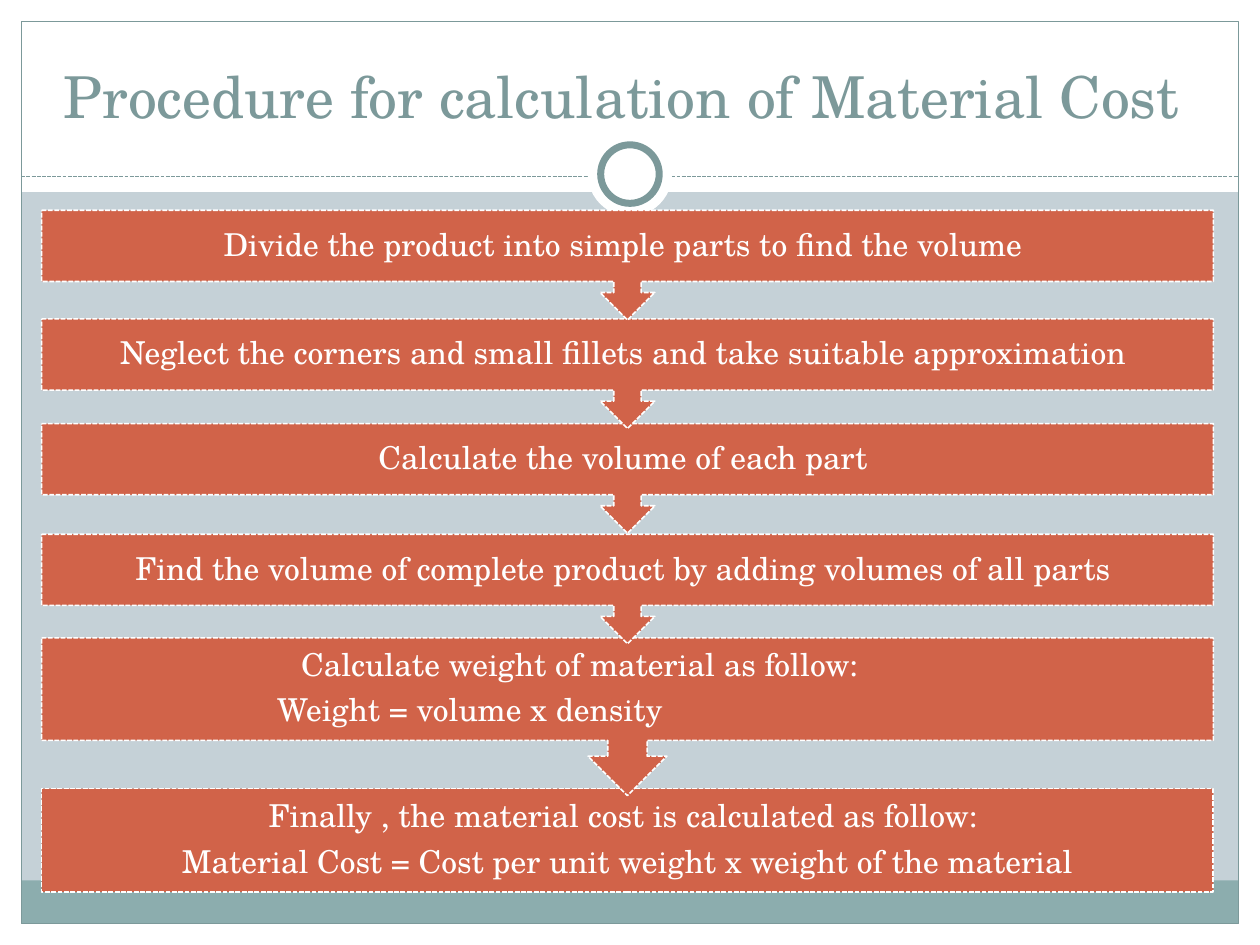
from dataclasses import dataclass
from typing import Optional

from lxml.etree import SubElement
from pptx import Presentation
from pptx.dml.color import RGBColor
from pptx.enum.dml import MSO_LINE
from pptx.enum.shapes import MSO_CONNECTOR, MSO_SHAPE
from pptx.enum.text import MSO_ANCHOR, PP_ALIGN
from pptx.oxml.ns import qn
from pptx.util import Cm, Pt


@dataclass(frozen=True)
class Theme:
    background: str = "C5D1D7"
    white: str = "FFFFFF"
    accent: str = "7C999A"
    footer: str = "8CADAE"
    step: str = "D16349"
    font: str = "TeX Gyre Schola"
    title_size: float = 33
    step_size: float = 18


@dataclass(frozen=True)
class Box:
    left: float
    top: float
    width: float
    height: float
    kind: MSO_SHAPE = MSO_SHAPE.RECTANGLE
    fill: Optional[str] = None
    line: Optional[str] = None
    line_width: float = 0.75
    dashed: bool = False


@dataclass(frozen=True)
class Step:
    top: float
    height: float
    lines: tuple[str, ...]
    indents: tuple[float, ...] = ()
    kind: MSO_SHAPE = MSO_SHAPE.DOWN_ARROW_CALLOUT


THEME = Theme()
SLIDE_WIDTH, SLIDE_HEIGHT = 25.4, 19.05
EDGE = 0.43
INNER_WIDTH = SLIDE_WIDTH - 2 * EDGE
DIVIDER_TOP = 3.56
STEP_LEFT, STEP_WIDTH = 0.84, 23.62
STEP_INSET = 0.36

FRAME = (
    Box(0, SLIDE_HEIGHT - EDGE, SLIDE_WIDTH, EDGE, fill=THEME.white),
    Box(0, 0, SLIDE_WIDTH, 3.87, fill=THEME.white),
    Box(0, 0, EDGE, SLIDE_HEIGHT, fill=THEME.white),
    Box(SLIDE_WIDTH - EDGE, 0, EDGE, SLIDE_HEIGHT, fill=THEME.white),
    Box(EDGE, 17.75, INNER_WIDTH, 0.87, fill=THEME.footer),
    Box(EDGE, EDGE, INNER_WIDTH, SLIDE_HEIGHT - 2 * EDGE, line=THEME.accent),
)
RING = (
    Box(11.85, 2.66, 1.7, 1.7, MSO_SHAPE.OVAL, THEME.white),
    Box(12.11, 2.92, 1.18, 1.18, MSO_SHAPE.OVAL, THEME.white, THEME.accent, 4),
)
STEPS = (
    Step(4.24, 2.21, ("Divide the product into simple parts to find the volume ",)),
    Step(6.43, 2.21, ("Neglect the corners and small fillets and take suitable approximation ",)),
    Step(8.54, 2.21, ("Calculate the volume of each part ",)),
    Step(10.77, 2.21, ("Find the volume of complete product by adding volumes of all parts ",)),
    Step(12.86, 3.18,
         ("Calculate weight of material as follow:", "Weight = volume x density"),
         indents=(4.87, 4.39)),
    Step(15.9, 2.08,
         ("Finally , the material cost is calculated as follow: ",
          " Material Cost = Cost per unit weight x weight of the material "),
         kind=MSO_SHAPE.RECTANGLE),
)


def color(value: str) -> RGBColor:
    return RGBColor.from_string(value)


def add_box(slide, box: Box):
    shape = slide.shapes.add_shape(
        box.kind, Cm(box.left), Cm(box.top), Cm(box.width), Cm(box.height))
    shape.shadow.inherit = False
    if box.fill:
        shape.fill.solid()
        shape.fill.fore_color.rgb = color(box.fill)
    else:
        shape.fill.background()
    if box.line:
        shape.line.color.rgb = color(box.line)
        shape.line.width = Pt(box.line_width)
        if box.dashed:
            shape.line.dash_style = MSO_LINE.SQUARE_DOT
    else:
        shape.line.fill.background()
    return shape


def write_text(shape, lines: tuple[str, ...], *, size: float, font_color: str,
               anchor: MSO_ANCHOR, inset: Optional[float] = None,
               line_spacing: float = 1.0, space_after: float = 0,
               indents: tuple[float, ...] = ()) -> None:
    frame = shape.text_frame
    frame.word_wrap = True
    frame.vertical_anchor = anchor
    if inset is not None:
        frame.margin_left = frame.margin_right = Cm(inset)
        frame.margin_top = frame.margin_bottom = Cm(inset)
    for index, line in enumerate(lines):
        paragraph = frame.add_paragraph() if index else frame.paragraphs[0]
        paragraph.alignment = PP_ALIGN.LEFT if indents else PP_ALIGN.CENTER
        paragraph.line_spacing = line_spacing
        paragraph.space_after = Pt(space_after)
        if indents:
            paragraph._p.get_or_add_pPr().set("marL", str(Cm(indents[index])))
        run = paragraph.add_run()
        run.text = line
        run.font.name = THEME.font
        run.font.size = Pt(size)
        run.font.color.rgb = color(font_color)


def add_divider(slide) -> None:
    divider = slide.shapes.add_connector(
        MSO_CONNECTOR.STRAIGHT, Cm(EDGE), Cm(DIVIDER_TOP),
        Cm(SLIDE_WIDTH - EDGE), Cm(DIVIDER_TOP))
    divider.line.color.rgb = color(THEME.accent)
    divider.line.width = Pt(0.75)
    divider.line.dash_style = MSO_LINE.SQUARE_DOT
    SubElement(divider._element.spPr, qn("a:effectLst"))


def add_title(slide, title: str) -> None:
    shape = slide.shapes.add_textbox(Cm(0.84), Cm(0.64), Cm(23.7), Cm(2.11))
    write_text(shape, (title,), size=THEME.title_size, font_color=THEME.accent,
               anchor=MSO_ANCHOR.BOTTOM)


def add_step(slide, step: Step) -> None:
    shape = add_box(slide, Box(STEP_LEFT, step.top, STEP_WIDTH, step.height, step.kind,
                               THEME.step, THEME.white, 0.9, True))
    write_text(shape, step.lines, size=THEME.step_size, font_color=THEME.white,
               anchor=MSO_ANCHOR.MIDDLE, inset=STEP_INSET, line_spacing=0.9,
               space_after=THEME.step_size * 0.35, indents=step.indents)


def main() -> None:
    presentation = Presentation()
    presentation.slide_width = Cm(SLIDE_WIDTH)
    presentation.slide_height = Cm(SLIDE_HEIGHT)
    slide = presentation.slides.add_slide(presentation.slide_layouts[6])
    slide.background.fill.solid()
    slide.background.fill.fore_color.rgb = color(THEME.background)
    for box in FRAME:
        add_box(slide, box)
    add_divider(slide)
    for box in RING:
        add_box(slide, box)
    add_title(slide, "Procedure for calculation of Material Cost ")
    for step in reversed(STEPS):
        add_step(slide, step)
    presentation.save("out.pptx")


if __name__ == "__main__":
    main()
